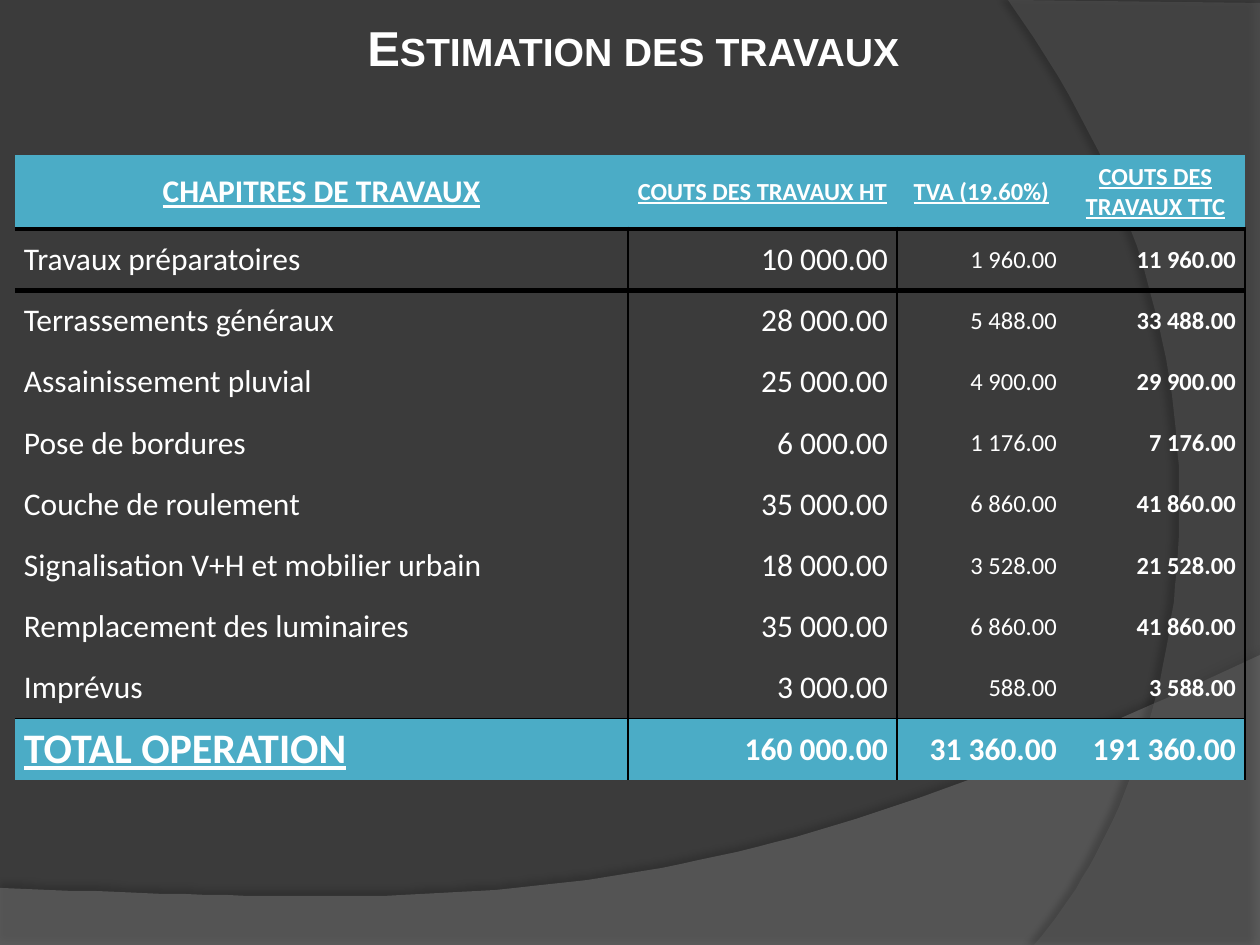
from dataclasses import dataclass

from lxml.etree import SubElement
from pptx import Presentation
from pptx.dml.color import RGBColor
from pptx.enum.text import MSO_ANCHOR as Anchor, PP_ALIGN as Align
from pptx.oxml import parse_xml
from pptx.oxml.ns import nsdecls, qn
from pptx.util import Emu, Pt

EMU_PER_PX = 914400 / 126
WHITE, BLACK, TEAL = "FFFFFF", "000000", "4BACC6"
NO_STYLE = "{2D5ABB26-0587-4C30-8999-92F81FD0307C}"
NO_BREAK_SPACE = chr(160)
VAT_RATE = 0.196
TABLE_LEFT, TABLE_TOP = 15, 155
COLUMN_WIDTHS = (613, 269, 169, 179)
HEADER_HEIGHT, BODY_HEIGHT = 74, 551
HEADERS = ("CHAPITRES DE TRAVAUX", "COUTS DES TRAVAUX HT", "TVA (19.60%)", "COUTS DES TRAVAUX TTC")
COSTS = {
    "Travaux préparatoires": 10000,
    "Terrassements généraux": 28000,
    "Assainissement pluvial": 25000,
    "Pose de bordures": 6000,
    "Couche de roulement": 35000,
    "Signalisation V+H et mobilier urbain": 18000,
    "Remplacement des luminaires": 35000,
    "Imprévus": 3000,
}

Point = tuple[float, float]


@dataclass
class Wave:
    corners: list[Point]
    curve: tuple[Point, Point, Point, Point]
    color: str
    opacity: int
    shadow_opacity: int
    shadow_distance: float
    shadow_angle: int


@dataclass
class TextStyle:
    size: int
    bold: bool = False
    underline: bool = False
    align: Align = Align.RIGHT


HEADER_STYLES = [TextStyle(size, True, True, Align.CENTER) for size in (18, 14, 14, 14)]
BODY_STYLES = [TextStyle(18, align=Align.JUSTIFY), TextStyle(18), TextStyle(14), TextStyle(14, True)]
TOTAL_STYLES = [TextStyle(24, True, True, Align.JUSTIFY)] + [TextStyle(18, True)] * 3

WAVES = [
    Wave([(0, 888), (0, 946), (1260, 946)],
         ((1260, 655), (704, 919), (493, 906), (0, 888)), "7F7F7F", 45, 35, 3.5, 270),
    Wave([(1260, 3), (1260, 945)],
         ((1034, 945), (1178, 780), (1283, 378), (1008, 0)), "5E5E5E", 40, 45, 4, 180),
]


def px(length: float) -> Emu:
    """Turn px into EMU."""
    return Emu(round(length * EMU_PER_PX))


def rgb(color: str) -> RGBColor:
    """Turn a hex string into a colour."""
    return RGBColor.from_string(color)


def bezier(curve: tuple[Point, Point, Point, Point], steps: int = 60) -> list[Point]:
    """Sample a cubic curve."""
    points = []
    for step in range(steps + 1):
        t = step / steps
        weights = ((1 - t) ** 3, 3 * t * (1 - t) ** 2, 3 * t * t * (1 - t), t ** 3)
        points.append(tuple(sum(w * p[axis] for w, p in zip(weights, curve)) for axis in (0, 1)))
    return points


def add_wave(slide, wave: Wave) -> None:
    """Draw one translucent background wave with its shadow."""
    start, *corners = wave.corners
    builder = slide.shapes.build_freeform(*start, scale=EMU_PER_PX)
    builder.add_line_segments(corners + bezier(wave.curve), close=True)
    shape = builder.convert_to_shape()
    shape.fill.solid()
    shape.fill.fore_color.rgb = rgb(wave.color)
    shape.line.fill.background()
    properties = shape._element.spPr
    color = properties.find(f"{qn('a:solidFill')}/{qn('a:srgbClr')}")
    SubElement(color, qn("a:alpha"), val=str(wave.opacity * 1000))
    properties.append(parse_xml(
        f'<a:effectLst {nsdecls("a")}><a:outerShdw blurRad="{Pt(4)}" dist="{Pt(wave.shadow_distance)}" '
        f'dir="{wave.shadow_angle * 60000}" rotWithShape="0"><a:srgbClr val="{BLACK}">'
        f'<a:alpha val="{wave.shadow_opacity * 1000}"/></a:srgbClr></a:outerShdw></a:effectLst>'))


def set_title(slide, text: str) -> None:
    """Place the title above the waves and format it."""
    title = slide.shapes.title
    slide.shapes._spTree.append(title._element)
    title.left, title.top, title.width, title.height = px(0), px(0), px(1260), px(76)
    frame = title.text_frame
    frame.text = text
    frame.word_wrap = True
    frame.vertical_anchor = Anchor.BOTTOM
    frame.margin_left, frame.margin_right = px(13), px(6)
    frame.margin_top = frame.margin_bottom = 0
    paragraph = frame.paragraphs[0]
    paragraph.alignment = Align.CENTER
    font = paragraph.font
    font.name, font.size, font.bold = "Arial", Pt(28), True
    font.color.rgb = rgb(WHITE)
    paragraph.runs[0]._r.get_or_add_rPr().set("cap", "small")


def set_borders(cell, borders: dict[str, int]) -> None:
    """Give a cell black borders, keyed by side (L, R, T, B) with widths in points."""
    properties = cell._tc.get_or_add_tcPr()
    sides = [side for side in "LRTB" if side in borders]
    for index, side in enumerate(sides):
        properties.insert(index, parse_xml(
            f'<a:ln{side} {nsdecls("a")} w="{Pt(borders[side])}"><a:solidFill>'
            f'<a:srgbClr val="{BLACK}"/></a:solidFill></a:ln{side}>'))


def fill_cell(cell, text: str, style: TextStyle, color: str | None) -> None:
    """Write and format one table cell."""
    cell.text = text
    cell.vertical_anchor = Anchor.MIDDLE
    cell.margin_left = cell.margin_right = px(9)
    cell.margin_top = cell.margin_bottom = 0
    paragraph = cell.text_frame.paragraphs[0]
    paragraph.alignment = style.align
    font = paragraph.font
    font.name, font.size, font.bold, font.underline = "Calibri", Pt(style.size), style.bold, style.underline
    font.color.rgb = rgb(WHITE)
    if color:
        cell.fill.solid()
        cell.fill.fore_color.rgb = rgb(color)
    else:
        cell.fill.background()


def cost_row(label: str, cost: float) -> list[str]:
    """List a label with its net cost, tax and gross cost."""
    amounts = (cost, cost * VAT_RATE, cost * (1 + VAT_RATE))
    return [label] + [f"{amount:,.2f}".replace(",", NO_BREAK_SPACE) for amount in amounts]


def cell_borders(row: int, column: int, last: int) -> dict[str, int]:
    """Work out the borders of a cell from its place."""
    borders = {}
    if row > 0 and column in (0, 3):
        borders["R"] = 1
    if row > 0 and column == 1:
        borders["L"] = 1
    if row in (1, last):
        borders["T"] = 3 if row == 1 else 1
    if row in (0, last - 1):
        borders["B"] = 3 if row == 0 else 1
    return borders


def add_cost_table(slide) -> None:
    """Draw the table of costs with its header and total."""
    rows = [HEADERS, *(cost_row(*item) for item in COSTS.items()),
            cost_row("TOTAL OPERATION", sum(COSTS.values()))]
    last = len(rows) - 1
    table = slide.shapes.add_table(
        len(rows), len(HEADERS), px(TABLE_LEFT), px(TABLE_TOP),
        px(sum(COLUMN_WIDTHS)), px(HEADER_HEIGHT + BODY_HEIGHT)).table
    table._tbl.tblPr.find(qn("a:tableStyleId")).text = NO_STYLE
    table.horz_banding = False
    for column, width in zip(table.columns, COLUMN_WIDTHS):
        column.width = px(width)
    for row, texts in enumerate(rows):
        table.rows[row].height = px(BODY_HEIGHT / last if row else HEADER_HEIGHT)
        styles = {0: HEADER_STYLES, last: TOTAL_STYLES}.get(row, BODY_STYLES)
        for column, (text, style) in enumerate(zip(texts, styles)):
            cell = table.cell(row, column)
            fill_cell(cell, text, style, TEAL if row in (0, last) else None)
            set_borders(cell, cell_borders(row, column, last))


def main() -> None:
    """Build the slide and save it."""
    presentation = Presentation()
    presentation.slide_width, presentation.slide_height = px(1260), px(945)
    slide = presentation.slides.add_slide(presentation.slide_layouts[5])
    slide.background.fill.solid()
    slide.background.fill.fore_color.rgb = rgb("3B3B3B")
    for wave in WAVES:
        add_wave(slide, wave)
    set_title(slide, "Estimation des travaux")
    add_cost_table(slide)
    presentation.save("out.pptx")


if __name__ == "__main__":
    main()
